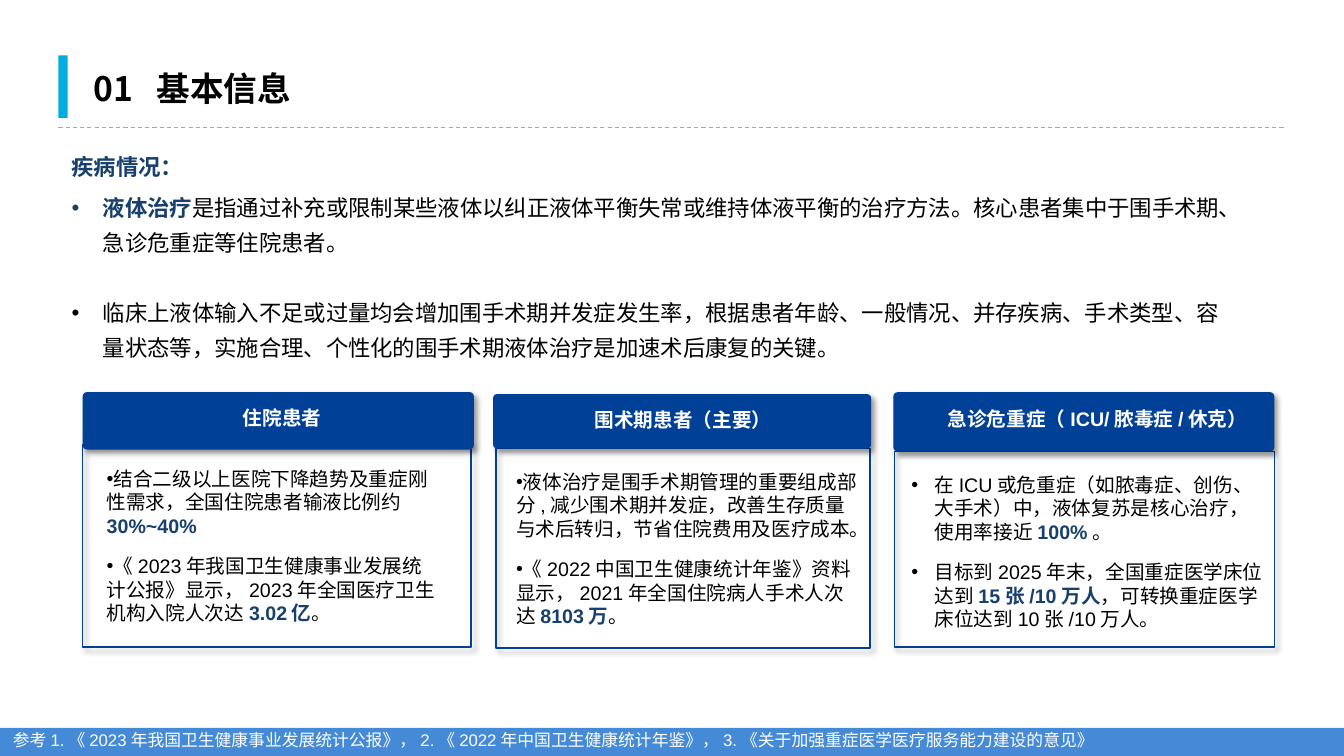
from lxml import etree
from pptx import Presentation
from pptx import util as u
from pptx.dml.color import RGBColor
from pptx.enum import dml, shapes, text
from pptx.oxml import parse_xml
from pptx.oxml.ns import nsdecls, qn

Inches = u.Inches
CJK_FONT = "Noto Sans CJK SC"
NAVY, BLUE, WHITE, BLACK = "17406D", "004097", "FFFFFF", "000000"

CARDS = [
    # panel box, header box, heading box, list box, bullet indents, heading, items
    dict(panel=(0.82, 4.41, 3.85, 2.01), header=(0.82, 3.89, 3.88, 0.57),
         heading_box=(1.06, 3.98, 3.48, 0.41), list_box=(0.96, 4.58, 3.51, 1.68),
         indents=(0, 0), heading="住院患者", items=[
             "结合二级以上医院下降趋势及重症刚性需求，全国住院患者输液比例约*30%~40%*",
             "《2023年我国卫生健康事业发展统计公报》显示，2023年全国医疗卫生机构入院人次达*3.02亿*。"]),
    dict(panel=(4.92, 4.45, 3.71, 1.98), header=(4.89, 3.91, 3.75, 0.54),
         heading_box=(5.02, 4, 3.51, 0.4), list_box=(5.02, 4.61, 3.61, 1.68),
         indents=(0, 0), heading="围术期患者（主要）", items=[
             "液体治疗是围手术期管理的重要组成部分,减少围术期并发症，改善生存质量与术后转归，节省住院费用及医疗成本。",
             "《2022中国卫生健康统计年鉴》资料显示，2021年全国住院病人手术人次达*8103万*。"]),
    dict(panel=(8.87, 4.48, 3.77, 1.94), header=(8.86, 3.89, 3.78, 0.59),
         heading_box=(9.2, 3.99, 3.37, 0.4), list_box=(8.86, 4.64, 3.78, 1.68),
         indents=(0.31, -0.23), heading="急诊危重症（ICU/脓毒症/休克）", items=[
             "在ICU或危重症（如脓毒症、创伤、大手术）中，液体复苏是核心治疗，使用率接近*100%*。",
             "目标到2025年末，全国重症医学床位达到*15张/10万人*，可转换重症医学床位达到10张/10万人。"]),
]


def color(value):
    return RGBColor.from_string(value)


def lengths(box):
    return [Inches(value) for value in box]


def place(shape, box):
    shape.left, shape.top, shape.width, shape.height = lengths(box)


def add_box(slide, box, fill=None, line=None, kind=shapes.MSO_SHAPE.RECTANGLE):
    shape = slide.shapes.add_shape(kind, *lengths(box))
    shape.shadow.inherit = False
    if fill:
        shape.fill.solid()
        shape.fill.fore_color.rgb = color(fill)
    else:
        shape.fill.background()
    if line:
        shape.line.color.rgb = color(line)
        shape.line.width = u.Pt(1)
    else:
        shape.line.fill.background()
    return shape


def add_shadow(shape):
    effects = shape._element.spPr.find(qn("a:effectLst"))
    effects.append(parse_xml(
        f'<a:outerShdw {nsdecls("a")} blurRad="{u.Pt(4)}" dist="{u.Pt(3)}" '
        'dir="2700000" algn="tl" rotWithShape="0"><a:srgbClr val="000000">'
        '<a:alpha val="40000"/></a:srgbClr></a:outerShdw>'))


def set_bullet(paragraph, indents):
    properties = paragraph._p.get_or_add_pPr()
    for name, value in zip(("marL", "indent"), indents):
        properties.set(name, str(Inches(value)))
    etree.SubElement(properties, qn("a:buFont")).set("typeface", "Arial")
    etree.SubElement(properties, qn("a:buChar")).set("char", "•")


def add_runs(paragraph, content, size, fill=BLACK, bold=False, font="Arial"):
    """Write content; parts between asterisks become bold navy."""
    for number, part in enumerate(content.split("*")):
        if not part:
            continue
        strong = number % 2 == 1
        run = paragraph.add_run()
        run.text = part
        formats = dict(size=u.Pt(size), bold=bold or strong, name=font)
        for name, value in formats.items():
            setattr(run.font, name, value)
        run.font.color.rgb = color(NAVY if strong else fill)
        latin = run._r.rPr.find(qn("a:latin"))
        east_asian = etree.Element(qn("a:ea"), typeface=CJK_FONT)
        latin.addnext(east_asian)


def write(shape, contents, size, indents=None, paragraph_format=None, wrap=True, **run_format):
    frame = shape.text_frame
    formats = dict(word_wrap=wrap, auto_size=text.MSO_AUTO_SIZE.NONE,
                   vertical_anchor=text.MSO_ANCHOR.TOP)
    for name, value in formats.items():
        setattr(frame, name, value)
    for number, content in enumerate(contents):
        paragraph = frame.add_paragraph() if number else frame.paragraphs[0]
        for name, value in (paragraph_format or {}).items():
            setattr(paragraph, name, value)
        if indents:
            set_bullet(paragraph, indents)
        add_runs(paragraph, content, size, **run_format)


def add_text(slide, box, contents, size, **formats):
    write(slide.shapes.add_textbox(*lengths(box)), contents, size, **formats)


def add_title(slide, box):
    left, top, width, height = box
    add_box(slide, (left, top, 0.09, height), fill="00ADDF")
    rule_top = top + height + 0.1
    rule = slide.shapes.add_connector(
        shapes.MSO_CONNECTOR.STRAIGHT, *lengths((left, rule_top, left + width, rule_top)))
    rule.line.color.rgb = color("A6A6A6")
    rule.line.width = u.Pt(0.75)
    rule.line.dash_style = dml.MSO_LINE.DASH
    etree.SubElement(rule._element.spPr, qn("a:effectLst"))
    title = slide.shapes.title
    place(title, (left + 0.25, top + 0.07, 2.16, 0.5))
    write(title, ["01  基本信息"], 24, wrap=False, bold=True, font=CJK_FONT,
          paragraph_format=dict(alignment=text.PP_ALIGN.LEFT))


def add_overview(slide, box):
    left, top, width, height = box
    add_text(slide, (left, top, width, 0.46), ["疾病情况："], 16, fill=NAVY, bold=True,
             font=CJK_FONT, paragraph_format=dict(
                 line_spacing=1.5, space_before=u.Pt(6), space_after=u.Pt(6)))
    body = slide.placeholders[1]
    place(body, (left, top + 0.46, width - 0.31, height - 0.46))
    write(body, [
        "*液体治疗*是指通过补充或限制某些液体以纠正液体平衡失常或维持体液平衡的治疗方法。"
        "核心患者集中于围手术期、急诊危重症等住院患者。",
        "临床上液体输入不足或过量均会增加围手术期并发症发生率，根据患者年龄、一般情况、"
        "并存疾病、手术类型、容量状态等，实施合理、个性化的围手术期液体治疗是加速术后康复的关键。",
    ], 16, indents=(0.31, -0.31), paragraph_format=dict(line_spacing=1.3, space_before=u.Pt(0)))
    body.text_frame.paragraphs[1].space_before = u.Pt(25)


def add_card(slide, panel, header, heading_box, list_box, indents, heading, items):
    add_shadow(add_box(slide, panel, line=BLUE))
    tab = add_box(slide, header, fill=BLUE, kind=shapes.MSO_SHAPE.ROUNDED_RECTANGLE)
    tab.adjustments[0] = 0.075
    add_shadow(tab)
    add_text(slide, heading_box, [heading], 14, fill=WHITE, bold=True,
             paragraph_format=dict(alignment=text.PP_ALIGN.CENTER))
    add_text(slide, list_box, items, 14, indents=indents,
             paragraph_format=dict(space_before=u.Pt(6), space_after=u.Pt(6)))


def add_references(slide, box):
    left, top, width, height = box
    add_box(slide, box, fill="448AD7")
    add_text(slide, (left + 0.03, top - 0.03, width - 0.63, 0.3), [
        "参考1.《2023年我国卫生健康事业发展统计公报》，2.《2022年中国卫生健康统计年鉴》，"
        "3.《关于加强重症医学医疗服务能力建设的意见》"], 12, fill=WHITE)


def main():
    presentation = Presentation()
    presentation.slide_width, presentation.slide_height = Inches(13.33), Inches(7.5)
    slide = presentation.slides.add_slide(presentation.slide_layouts[1])
    add_title(slide, (0.58, 0.55, 12.17, 0.62))
    add_overview(slide, (0.61, 1.34, 12.12, 2.31))
    for card in CARDS:
        add_card(slide, **card)
    add_references(slide, (0, 7.22, 13.33, 0.28))
    presentation.save("out.pptx")


if __name__ == "__main__":
    main()
